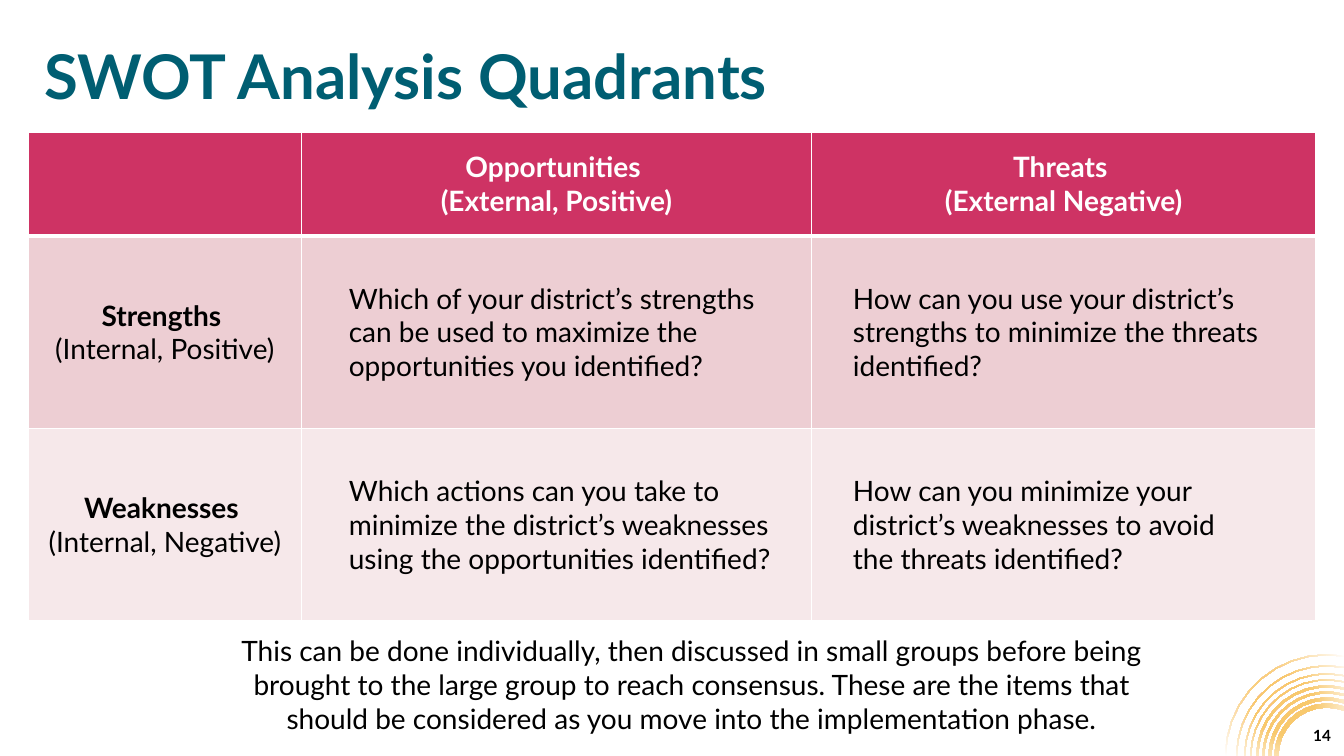
import math
from dataclasses import dataclass

from lxml import etree
from pptx import Presentation
from pptx import util as u
from pptx.dml.color import RGBColor
from pptx.enum import text
from pptx.oxml import ns

CENTER, LEFT, RIGHT = text.PP_ALIGN.CENTER, text.PP_ALIGN.LEFT, text.PP_ALIGN.RIGHT
MIDDLE, TOP = text.MSO_ANCHOR.MIDDLE, text.MSO_ANCHOR.TOP


@dataclass
class Theme:
    font: str = "Lato"
    title: str = "005E72"
    header: str = "CE3364"
    bands: tuple = ("EDCED3", "F6E8EA")
    ink: str = "000000"
    white: str = "FFFFFF"
    gold: str = "F8C96D"
    title_size: int = 44
    body_size: int = 20
    number_size: int = 11


class SlideBuilder:
    def __init__(self, slide, theme):
        self.slide, self.theme = slide, theme

    def style(self, paragraph, size, color, bold=False, align=LEFT):
        paragraph.alignment = align
        font = paragraph.font
        font.name, font.size, font.bold = self.theme.font, u.Pt(size), bold
        font.color.rgb = RGBColor.from_string(color)

    def text_box(self, box, words, size, color, bold=False, align=LEFT,
                 anchor=TOP, line_spacing=None):
        shape = self.slide.shapes.add_textbox(*map(u.Inches, box))
        frame = shape.text_frame
        frame.word_wrap, frame.vertical_anchor = True, anchor
        paragraph = frame.paragraphs[0]
        paragraph.text = words
        paragraph.line_spacing = line_spacing
        self.style(paragraph, size, color, bold, align)

    def border(self, cell, sides):
        """Draw white cell borders; sides maps a side letter to points."""
        properties = cell._tc.get_or_add_tcPr()
        for index, (side, points) in enumerate(sides.items()):
            line = etree.Element(ns.qn(f"a:ln{side}"), w=str(u.Pt(points)))
            fill = etree.SubElement(line, ns.qn("a:solidFill"))
            etree.SubElement(fill, ns.qn("a:srgbClr"), val=self.theme.white)
            properties.insert(index, line)

    def cell(self, cell, words, fill, color, bold=False, align=LEFT, indent=0):
        cell.fill.solid()
        cell.fill.fore_color.rgb = RGBColor.from_string(fill)
        cell.vertical_anchor = MIDDLE
        cell.text = words
        for paragraph in cell.text_frame.paragraphs:
            self.style(paragraph, self.theme.body_size, color, bold, align)
            if indent:
                properties = paragraph._p.get_or_add_pPr()
                properties.set("marL", str(u.Inches(indent)))
                properties.set("indent", "0")

    def quadrants(self, box, widths, heights, headers, rows, indents):
        theme = self.theme
        table = self.slide.shapes.add_table(
            len(heights), len(widths), *map(u.Inches, box)).table
        table.horz_banding = False
        for column, width in zip(table.columns, widths):
            column.width = u.Inches(width)
        for row, height in zip(table.rows, heights):
            row.height = u.Inches(height)

        # Header row
        for column, words in enumerate(headers):
            cell = table.cell(0, column)
            self.cell(cell, words, theme.header, theme.white, True, CENTER)
            self.border(cell, {"L": 1, "R": 1, "T": 1, "B": 3})

        # Body rows: a label with a bold first line, then the questions
        for number, (label, *questions) in enumerate(rows, 1):
            fill = theme.bands[number - 1]
            label_cell = table.cell(number, 0)
            self.cell(label_cell, label, fill, theme.ink, align=CENTER)
            label_cell.text_frame.paragraphs[0].runs[0].font.bold = True
            for column, question in enumerate(questions, 1):
                self.cell(table.cell(number, column), question, fill, theme.ink,
                          indent=indents[column - 1])
            for column in range(len(widths)):
                self.border(table.cell(number, column),
                            {"L": 1, "R": 1, "T": 3 if number == 1 else 1, "B": 1})

    def rings(self, center, right, bands, steps=10):
        """Concentric half rings, cut off at the right edge of the slide."""
        center_x, center_y = center

        def arc(radius):
            end = math.acos((right - center_x) / radius)
            angles = (math.pi + (end - math.pi) * i / steps for i in range(steps + 1))
            return [(u.Inches(center_x + radius * math.cos(a)),
                     u.Inches(center_y - radius * math.sin(a))) for a in angles]

        outlines = [arc(r) + arc(r - width)[::-1] for r, width in bands]
        builder = self.slide.shapes.build_freeform(*outlines[0][0], scale=1.0)
        for number, outline in enumerate(outlines):
            if number:
                builder.move_to(*outline[0])
            builder.add_line_segments(outline[1:], close=True)
        shape = builder.convert_to_shape()
        shape.shadow.inherit = False
        shape.line.fill.background()

        # Circular gradient from gold to white
        shape.fill.gradient()
        gradient = shape._element.spPr.find(ns.qn("a:gradFill"))
        for child in list(gradient):
            gradient.remove(child)
        stops = etree.SubElement(gradient, ns.qn("a:gsLst"))
        for position, color in ((37, self.theme.gold), (100, self.theme.white)):
            stop = etree.SubElement(stops, ns.qn("a:gs"), pos=str(position * 1000))
            etree.SubElement(stop, ns.qn("a:srgbClr"), val=color)
        route = etree.SubElement(gradient, ns.qn("a:path"), path="circle")
        etree.SubElement(route, ns.qn("a:fillToRect"),
                         dict.fromkeys("ltrb", "50000"))


def main():
    presentation = Presentation()
    presentation.slide_width = u.Inches(13.33)
    presentation.slide_height = u.Inches(7.5)
    theme = Theme()
    slide = presentation.slides.add_slide(presentation.slide_layouts[6])
    builder = SlideBuilder(slide, theme)

    # Corner ornament: outer radius and thickness of each ring
    builder.rings((13.16, 7.5), 13.33, (
        (1.01, 0.01), (0.9, 0.01), (0.82, 0.01), (0.76, 0.01),
        (0.7, 0.02), (0.64, 0.02), (0.58, 0.03), (0.52, 0.04)))

    # Slide number and title
    builder.text_box((10.3, 7.18, 3, 0.24), "14", theme.number_size, theme.ink,
                     bold=True, align=RIGHT, anchor=MIDDLE)
    builder.text_box((0.34, 0.4, 12.66, 0.77), "SWOT Analysis Quadrants",
                     theme.title_size, theme.title, bold=True, anchor=MIDDLE,
                     line_spacing=0.9)

    # SWOT table
    builder.quadrants(
        (0.28, 1.31, 12.77, 4.85), (2.71, 5.06, 5), (1.03, 1.91, 1.91),
        headers=("", "Opportunities \v(External, Positive)",
                 "Threats \v(External Negative)"),
        rows=(
            ("Strengths \n(Internal, Positive)",
             "Which of your district’s strengths can be used to maximize the "
             "opportunities you identified?",
             "How can you use your district’s strengths to minimize the threats "
             "identified?"),
            ("Weaknesses \v(Internal, Negative)",
             "Which actions can you take to minimize the district’s weaknesses "
             "using the opportunities identified?",
             "How can you minimize your \vdistrict’s weaknesses to avoid \v"
             "the threats identified?")),
        indents=(0.37, 0.31))

    # Closing note
    builder.text_box(
        (2.15, 6.24, 9.42, 1.11),
        "This can be done individually, then discussed in small groups before being "
        "brought to the large group to reach consensus. These are the items that "
        "should be considered as you move into the implementation phase.",
        theme.body_size, theme.ink, align=CENTER)

    presentation.save("out.pptx")


if __name__ == "__main__":
    main()
